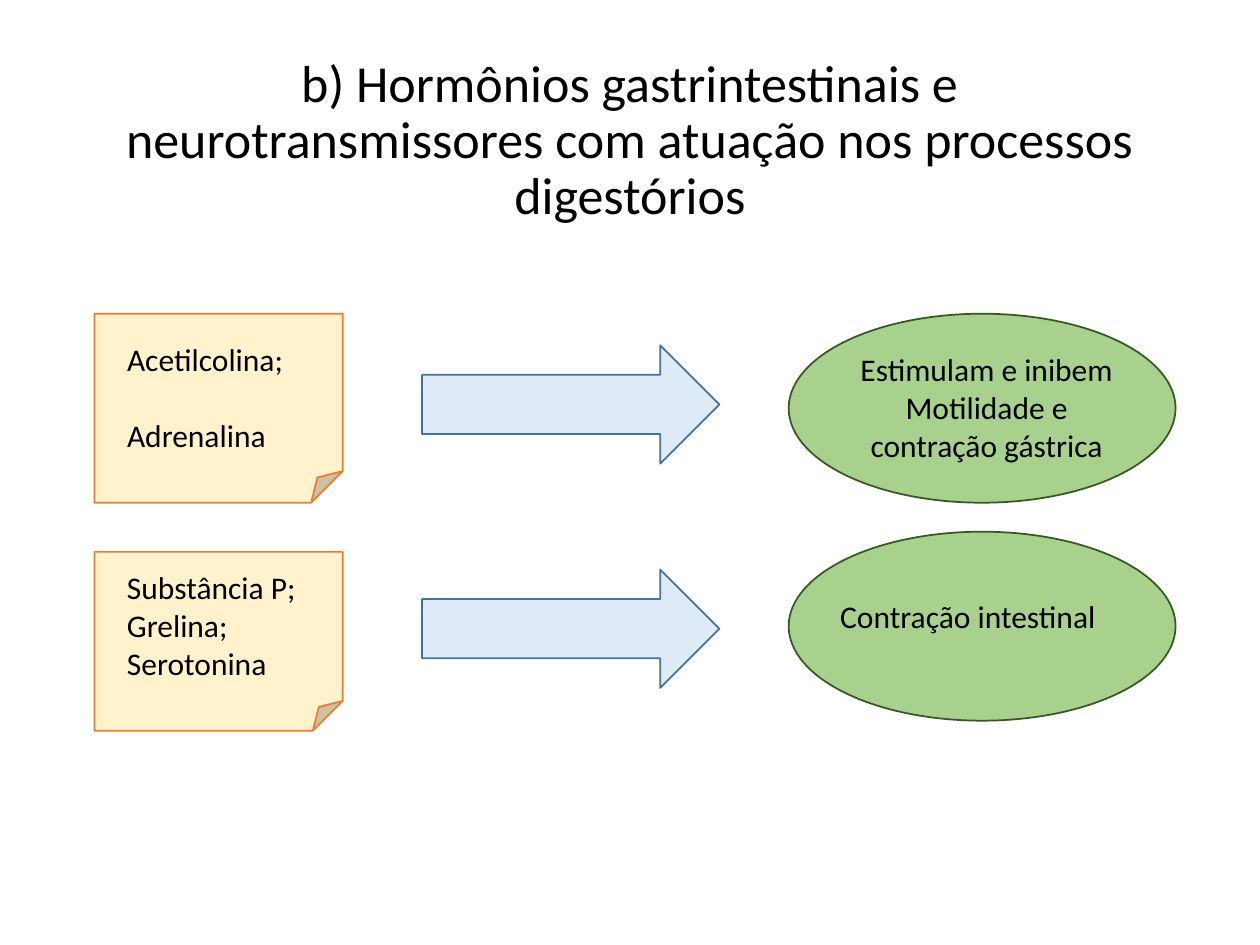
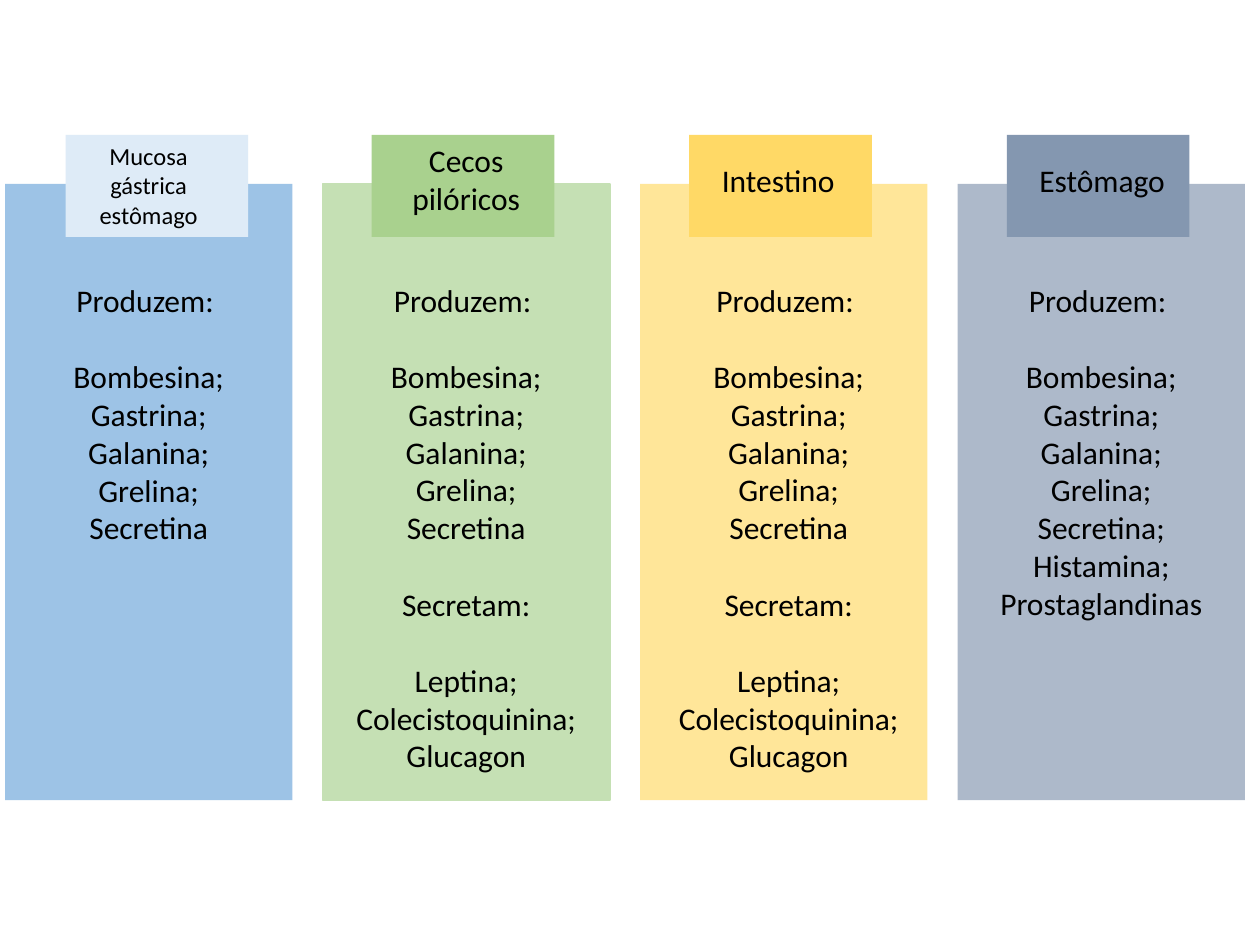
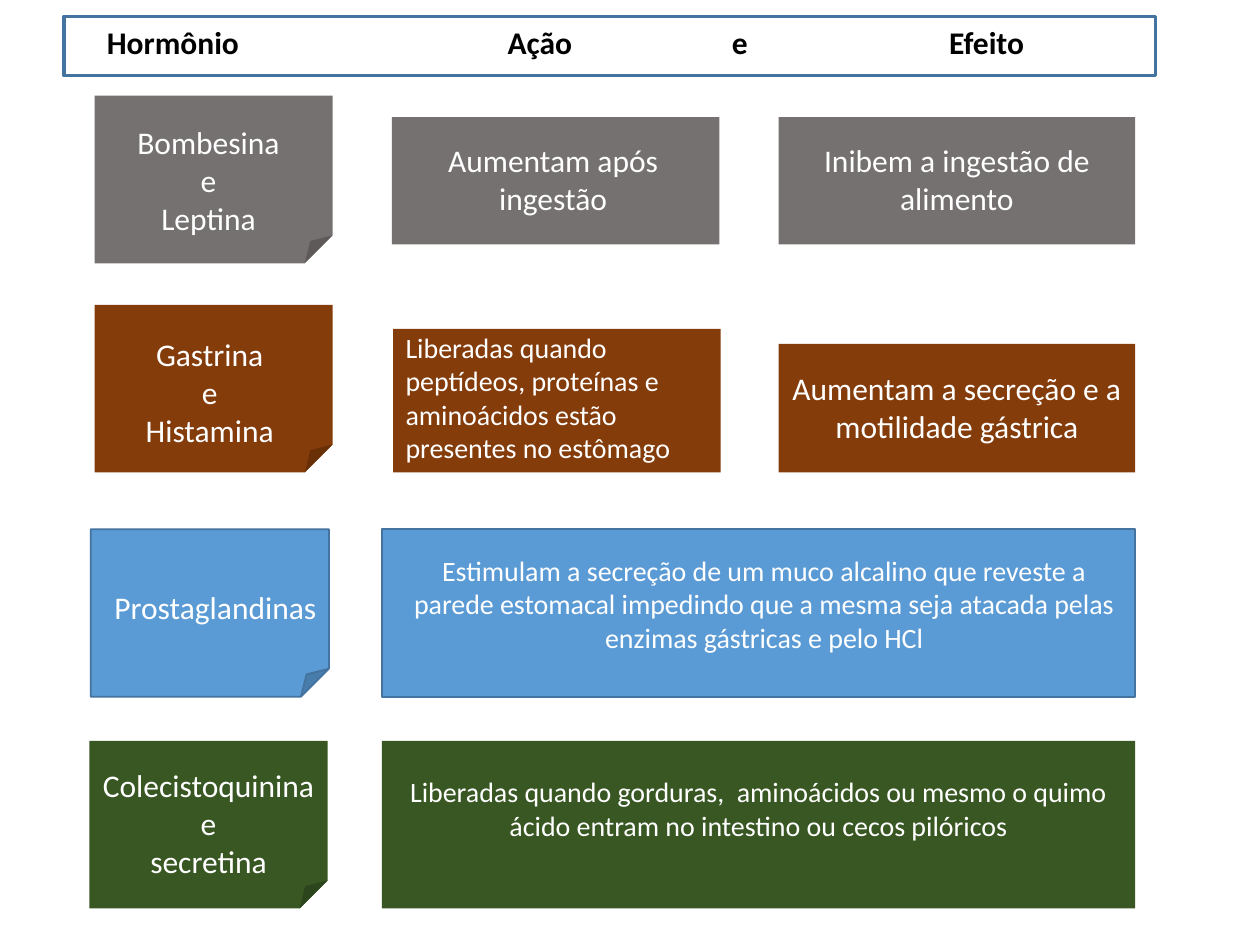
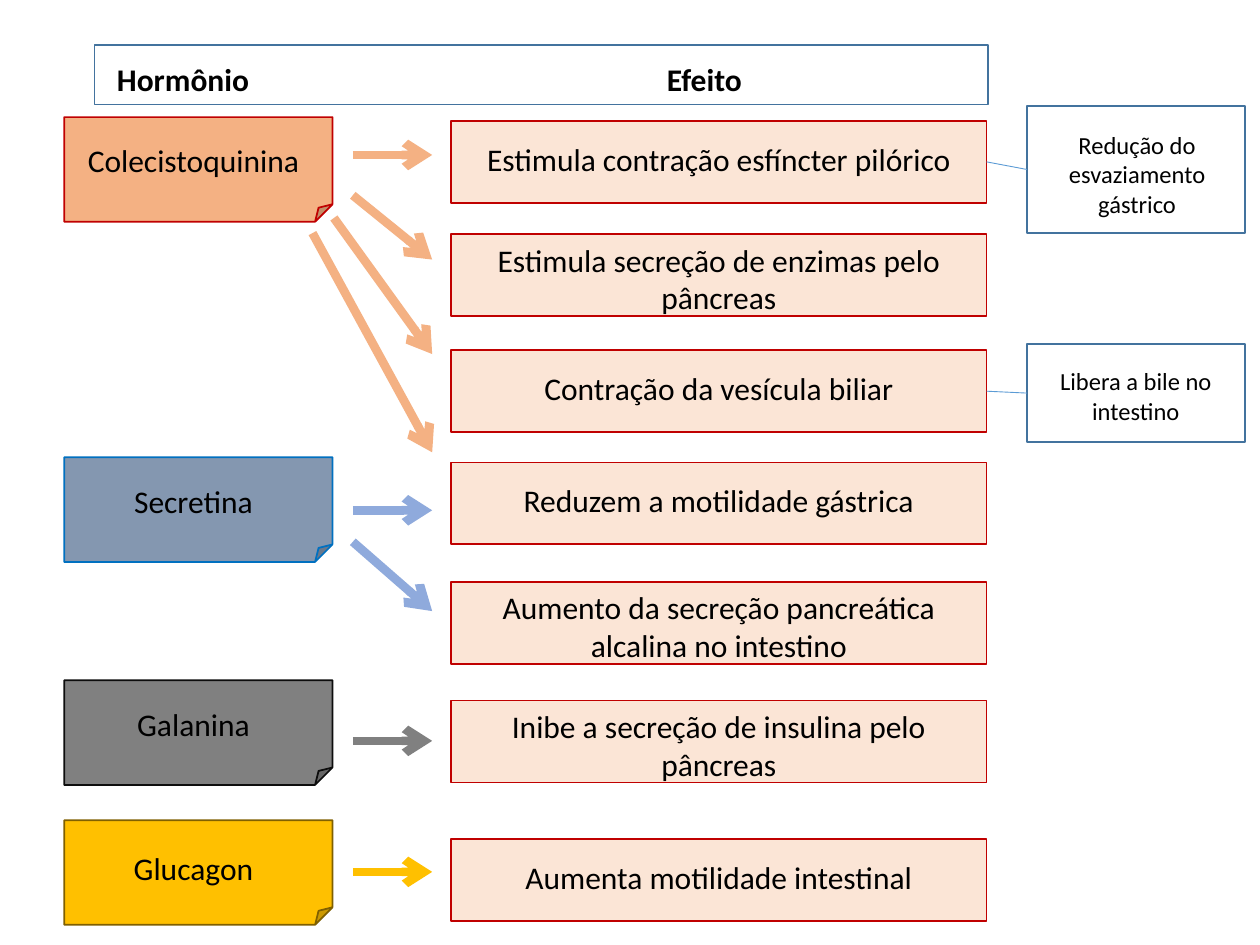
from lxml import etree
from pptx import Presentation
from pptx.dml.color import RGBColor
from pptx.enum.shapes import MSO_CONNECTOR as CONN, MSO_SHAPE as SHAPE
from pptx.enum.text import MSO_ANCHOR as ANCHOR, MSO_AUTO_SIZE as FIT, PP_ALIGN as ALIGN
from pptx.oxml.ns import qn
from pptx.util import Inches, Pt

FONT = "Calibri"
BLACK, WHITE = "000000", "FFFFFF"
BLUE_LINE, RED_LINE = "43739E", "C00000"
TITLE_ONLY, BLANK = 5, 6


def rgb(value):
    return RGBColor.from_string(value)


class Deck:
    def __init__(self):
        self.prs = Presentation()
        self.prs.slide_width, self.prs.slide_height = Inches(10), Inches(7.5)
        self.s = None

    def slide(self, layout=BLANK):
        self.s = self.prs.slides.add_slide(self.prs.slide_layouts[layout])

    def run(self, p, text, size, color, bold=False):
        r = p.add_run()
        r.text = text
        r.font.name, r.font.size, r.font.bold = FONT, Pt(size), bold
        r.font.color.rgb = rgb(color)

    def title(self, x, y, w, h, text, size):
        sp = self.s.shapes.title
        sp.left, sp.top, sp.width, sp.height = map(Inches, (x, y, w, h))
        tf = sp.text_frame
        tf.auto_size, tf.vertical_anchor = FIT.NONE, ANCHOR.MIDDLE
        p = tf.paragraphs[0]
        p.alignment, p.line_spacing = ALIGN.CENTER, 0.9
        self.run(p, text, size, BLACK)

    def shape(self, kind, x, y, w, h, fill=None, line=None, width=1):
        sp = self.s.shapes.add_shape(kind, *map(Inches, (x, y, w, h)))
        sp.shadow.inherit = False
        if fill:
            sp.fill.solid()
            sp.fill.fore_color.rgb = rgb(fill)
        else:
            sp.fill.background()
        if line:
            sp.line.color.rgb = rgb(line)
            sp.line.width = Pt(width)
        else:
            sp.line.fill.background()
        return sp

    def text(self, x, y, w, h, text, size=18, color=BLACK, align=ALIGN.CENTER, bold=False):
        """A line break starts a paragraph; a double one also leaves a line's gap."""
        tf = self.s.shapes.add_textbox(*map(Inches, (x, y, w, h))).text_frame
        tf.word_wrap = True
        p = None
        for group in text.split("\n\n"):
            for i, line in enumerate(group.split("\n")):
                gap = p is not None and i == 0
                p = tf.paragraphs[0] if p is None else tf.add_paragraph()
                p.alignment = align
                if gap:
                    p.space_before = Pt(size * 1.22)
                self.run(p, line, size, color, bold)

    def line(self, x1, y1, x2, y2, color, width, arrow=False):
        c = self.s.shapes.add_connector(CONN.STRAIGHT, *map(Inches, (x1, y1, x2, y2)))
        c.line.color.rgb = rgb(color)
        c.line.width = Pt(width)
        if arrow:
            etree.SubElement(c.line._get_or_add_ln(), qn("a:tailEnd"), type="arrow")
        etree.SubElement(c._element.spPr, qn("a:effectLst"))
        return c

    def join(self, left, right, color, width):
        c = self.line(0, 0, 1, 1, color, width)
        c.begin_connect(left, 3)
        c.end_connect(right, 1)


def neurotransmitters(d):
    d.slide(TITLE_ONLY)
    d.title(0.69, 0.4, 8.62, 1.45, "b) Hormônios gastrintestinais e neurotransmissores "
            "com atuação nos processos digestórios", 29.7)
    # Note, arrow and ellipse of each row
    for note_y, note_h, arrow_y, ellipse_y in ((2.49, 1.5, 2.74, 2.49), (4.38, 1.42, 4.52, 4.22)):
        d.shape(SHAPE.FOLDED_CORNER, 0.75, note_y, 1.97, note_h, "FFF2CC", "ED7D31")
        d.shape(SHAPE.RIGHT_ARROW, 3.35, arrow_y, 2.36, 0.94, "DEEBF7", BLUE_LINE)
        d.shape(SHAPE.OVAL, 6.26, ellipse_y, 3.07, 1.5, "A9D18E", "385723")
    # Labels
    d.text(0.91, 2.65, 1.81, 1.01, "Acetilcolina;\n\nAdrenalina", align=ALIGN.LEFT)
    d.text(6.57, 2.73, 2.52, 1.01, "Estimulam e inibem\nMotilidade e contração gástrica")
    d.text(0.91, 4.46, 1.57, 1.01, "Substância P;\nGrelina;\nSerotonina", align=ALIGN.LEFT)
    d.text(6.57, 4.69, 2.36, 0.4, "Contração intestinal", align=ALIGN.LEFT)


def producing_organs(d):
    d.slide()
    produced = "Produzem: \n\nBombesina;\nGastrina;\nGalanina;\nGrelina;\nSecretina"
    secreted = "\n\nSecretam:\n\nLeptina;\nColecistoquinina;\nGlucagon"
    # Fill, border, tab fill, tab offset, list offset, list height, list
    columns = (
        ("9DC3E6", None, "DEEBF7", 0.48, 0, 2.22, produced),
        ("C5E0B4", "C5E0B4", "A9D18E", 0.39, 0, 4.34, produced + secreted),
        ("FFE699", None, "FFD966", 0.39, 0.08, 4.04, produced + secreted),
        ("ADB9CA", None, "8497B0", 0.39, 0, 2.83, produced + ";\nHistamina;\nProstaglandinas"),
    )
    for i, (fill, border, tab, tab_dx, list_dx, list_h, names) in enumerate(columns):
        x = 0.04 + 2.52 * i
        d.shape(SHAPE.RECTANGLE, x, 1.46, 2.28, 4.89, fill, border)
        d.shape(SHAPE.RECTANGLE, x + tab_dx, 1.07, 1.45, 0.81, tab)
        d.text(x + list_dx, 2.18, 2.28 - list_dx, list_h, names)
    # Tab labels
    d.text(0.51, 1.07, 1.34, 0.81, "Mucosa gástrica estômago", 14)
    d.text(3.11, 1.07, 1.18, 0.71, "Cecos pilóricos")
    d.text(5.63, 1.23, 1.18, 0.4, "Intestino", align=ALIGN.LEFT)
    d.text(8.15, 1.23, 1.26, 0.4, "Estômago", align=ALIGN.LEFT)


def actions_and_effects(d):
    d.slide()
    # Header
    d.shape(SHAPE.RECTANGLE, 0.51, 0.13, 8.66, 0.47, line=BLUE_LINE, width=2)
    for x, w, label, align in (
            (0.75, 1.89, "Hormônio", ALIGN.LEFT), (3.5, 1.57, "Ação", ALIGN.CENTER),
            (5.71, 0.47, "e", ALIGN.LEFT), (6.65, 2.36, "Efeito", ALIGN.CENTER)):
        d.text(x, 0.13, w, 0.4, label, align=align, bold=True)
    # Hormone notes: place, colours, then the label and its box
    for x, y, fill, border, label, box in (
            (0.75, 0.76, "767171", None, "Bombesina\ne\nLeptina", (0.83, 0.93, 1.65, 1.01)),
            (0.75, 2.42, "843C0B", None, "Gastrina\ne\nHistamina", (0.93, 2.61, 1.47, 1.01)),
            (0.72, 4.2, "5B9BD5", BLUE_LINE, "Prostaglandinas", (0.78, 4.62, 1.86, 0.4)),
            (0.71, 5.88, "385723", None, "Colecistoquinina\ne\nsecretina",
             (0.71, 6.03, 1.89, 1.01))):
        d.shape(SHAPE.FOLDED_CORNER, x, y, 1.89, 1.33, fill, border)
        d.text(*box, label, color=WHITE)
    # Action and effect cards: card, colours, then the text, its box and size
    for card, fill, border, label, box, size, align in (
            ((3.11, 0.93, 2.6, 1.01), "767171", None, "Aumentam após ingestão",
             (3.25, 1.07, 2.28, 0.71), 18, ALIGN.CENTER),
            ((6.18, 0.93, 2.83, 1.01), "767171", None, "Inibem a ingestão de alimento",
             (6.18, 1.07, 2.83, 0.71), 18, ALIGN.CENTER),
            ((3.12, 2.61, 2.6, 1.14), "843C0B", None,
             "Liberadas quando peptídeos, proteínas e aminoácidos estão presentes no estômago",
             (3.12, 2.57, 2.59, 1.18), 16, ALIGN.LEFT),
            ((6.18, 2.73, 2.83, 1.02), "843C0B", None,
             "Aumentam a secreção e a motilidade gástrica",
             (6.18, 2.88, 2.83, 0.71), 18, ALIGN.CENTER),
            ((3.03, 4.2, 5.98, 1.33), "5B9BD5", BLUE_LINE,
             "Estimulam a secreção de um muco alcalino que reveste a parede estomacal "
             "impedindo que a mesma seja atacada pelas enzimas gástricas e pelo HCl",
             (3.11, 4.34, 5.91, 0.91), 16, ALIGN.CENTER),
            ((3.03, 5.88, 5.98, 1.33), "385723", None,
             "Liberadas quando gorduras,  aminoácidos ou mesmo o quimo ácido entram "
             "no intestino ou cecos pilóricos",
             (3.03, 6.1, 5.98, 0.64), 16, ALIGN.CENTER)):
        d.shape(SHAPE.RECTANGLE, *card, fill, border)
        d.text(*box, label, size, WHITE, align)


def hormone_effects(d):
    d.slide()
    # Header
    d.shape(SHAPE.RECTANGLE, 0.75, 0.36, 7.09, 0.47, WHITE, BLUE_LINE)
    d.text(0.83, 0.43, 1.65, 0.4, "Hormônio", align=ALIGN.LEFT, bold=True)
    d.text(4.29, 0.43, 2.6, 0.4, "Efeito", bold=True)
    # Hormones
    for y, text_y, name, fill, border in (
            (0.93, 1.07, "Colecistoquinina", "F4B183", RED_LINE),
            (3.63, 3.78, "Secretina", "8497B0", "0070C0"),
            (5.4, 5.55, "Galanina", "808080", "0D0D0D"),
            (6.51, 6.69, "Glucagon", "FFC000", "806000")):
        d.shape(SHAPE.FOLDED_CORNER, 0.51, y, 2.13, 0.83, fill, border)
        d.text(0.59, text_y, 1.89, 0.4, name)
    # Effects; two-line texts start at the top of their card
    cards = []
    for y, lines, effect in (
            (0.96, 1, "Estimula contração esfíncter pilórico"),
            (1.86, 2, "Estimula secreção de enzimas pelo pâncreas"),
            (2.78, 1, "Contração da vesícula biliar"),
            (3.67, 1, "Reduzem a motilidade gástrica"),
            (4.62, 2, "Aumento da secreção pancreática alcalina no intestino"),
            (5.56, 2, "Inibe a secreção de insulina pelo pâncreas"),
            (6.66, 1, "Aumenta motilidade intestinal")):
        cards.append(d.shape(SHAPE.RECTANGLE, 3.58, y, 4.25, 0.65, "FBE5D6", RED_LINE))
        text_y, text_h = (y + 0.1, 0.4) if lines == 1 else (y, 0.71)
        d.text(3.58, text_y, 4.25, text_h, effect)
    # Arrows from hormones to effects
    for color, arrows in (
            ("F4B183", ((2.8, 1.23, 1.23), (2.8, 1.55, 2.06),
                        (2.65, 1.73, 2.81), (2.48, 1.85, 3.59))),
            ("8FAADC", ((2.8, 4.05, 4.05), (2.8, 4.3, 4.85))),
            ("808080", ((2.8, 5.88, 5.88),)),
            ("FFC000", ((2.8, 6.92, 6.92),))):
        for x, y1, y2 in arrows:
            d.line(x, y1, 3.43, y2, color, 5, arrow=True)
    # Consequences joined to their effect
    for card, y, h, box, label in (
            (cards[0], 0.84, 1.01, (8.24, 0.98, 1.57, 0.81), "Redução do esvaziamento gástrico"),
            (cards[2], 2.73, 0.78, (8.23, 2.86, 1.57, 0.57), "Libera a bile no intestino")):
        callout = d.shape(SHAPE.RECTANGLE, 8.15, y, 1.73, h, line=BLUE_LINE)
        d.text(*box, label, 14)
        d.join(card, callout, "5B9BD5", 0.5)


def main():
    d = Deck()
    for build in (neurotransmitters, producing_organs, actions_and_effects, hormone_effects):
        build(d)
    d.prs.save("out.pptx")


if __name__ == "__main__":
    main()
